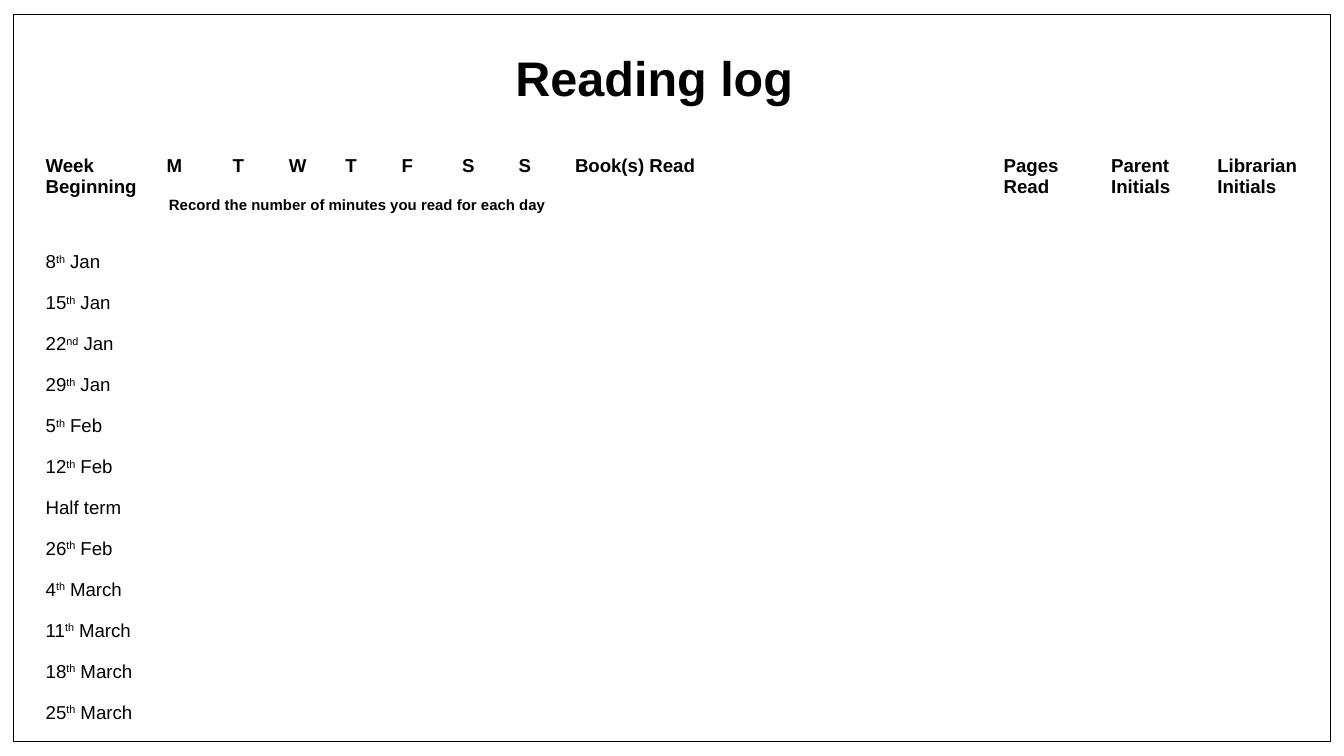
from lxml.etree import SubElement as Sub
from pptx import Presentation as Deck
from pptx.dml.color import RGBColor as RGB
from pptx.enum.shapes import MSO_SHAPE as Kind
from pptx.enum.text import MSO_ANCHOR as Anchor, MSO_AUTO_SIZE as Fit, PP_ALIGN as Align
from pptx.oxml.ns import qn
from pptx.util import Pt

BLACK = RGB(0, 0, 0)
FACE = "Arial"
SCALE = 4572

COLS = [180, 98, 84, 84, 84, 90, 84, 84, 638, 160, 158, 160]
ROW = 61
HEADS = ["Week Beginning", *"MTWTFSS", "Book(s) Read",
         "Pages Read", "Parent Initials", "Librarian Initials"]
TALL = [0, 8, 9, 10, 11]
HINT = "Record the number of minutes you read for each day"
WEEKS = [("8", "th", " Jan"), ("15", "th", " Jan"), ("22", "nd", " Jan"),
         ("29", "th", " Jan"), ("5", "th", " Feb"), ("12", "th", " Feb"),
         ("Half term",), ("26", "th", " Feb"), ("4", "th", " March"),
         ("11", "th", " March"), ("18", "th", " March"), ("25", "th", " March")]


def px(*nums):
    return [n * SCALE for n in nums]


class Page:
    def __init__(self, wide, high):
        self.deck = Deck()
        self.deck.slide_width, self.deck.slide_height = px(wide, high)
        self.slide = self.deck.slides.add_slide(self.deck.slide_layouts[5])
        self.shapes = self.slide.shapes

    def style(self, para, size, bold):
        font = para.font
        font.name, font.size, font.bold = FACE, Pt(size), bold
        font.color.rgb = BLACK

    def frame(self, *box):
        rect = self.shapes.add_shape(Kind.RECTANGLE, *px(*box))
        rect.shadow.inherit = False
        rect.fill.background()
        rect.line.color.rgb = BLACK
        rect.line.width = Pt(0.75)

    def title(self, text, *box):
        head = self.shapes.title
        head.left, head.top, head.width, head.height = px(*box)
        body = head.text_frame
        body.text = text
        body.auto_size = Fit.NONE
        body.vertical_anchor = Anchor.MIDDLE
        body.margin_left = body.margin_right = body.margin_top = body.margin_bottom = 20 * SCALE
        para = body.paragraphs[0]
        para.alignment = Align.CENTER
        para.line_spacing = 1.15
        self.style(para, 26, True)

    def table(self, left, top, cols, count, high):
        box = px(left, top, sum(cols), count * high)
        grid = self.shapes.add_table(count, len(cols), *box).table
        grid.first_row = grid.horz_banding = False
        for col, wide in zip(grid.columns, cols):
            col.width = wide * SCALE
        for cell in grid.iter_cells():
            cell.fill.background()
            end = Sub(cell.text_frame.paragraphs[0]._p, qn("a:endParaRPr"))
            end.set("sz", "1000")
        return grid

    def cell(self, cell, parts, size=10, bold=False, align=Align.LEFT):
        para = cell.text_frame.paragraphs[0]
        for spot, part in enumerate(parts):
            run = para.add_run()
            run.text = part
            if spot == 1:
                run._r.get_or_add_rPr().set("baseline", "30000")
        para.alignment = align
        self.style(para, size, bold)


def main():
    page = Page(2000, 1125)
    page.frame(20, 22, 1960, 1082)
    page.title("Reading log", 700, 60, 548, 96)
    grid = page.table(48, 222, COLS, len(WEEKS) + 2, ROW)
    for col in TALL:
        grid.cell(0, col).merge(grid.cell(1, col))
    grid.cell(1, 1).merge(grid.cell(1, 7))
    for col, head in enumerate(HEADS):
        page.cell(grid.cell(0, col), [head], bold=True)
    page.cell(grid.cell(1, 1), [HINT], 8, True, Align.CENTER)
    for row, week in enumerate(WEEKS, 2):
        page.cell(grid.cell(row, 0), week)
    page.deck.save("out.pptx")


if __name__ == "__main__":
    main()
